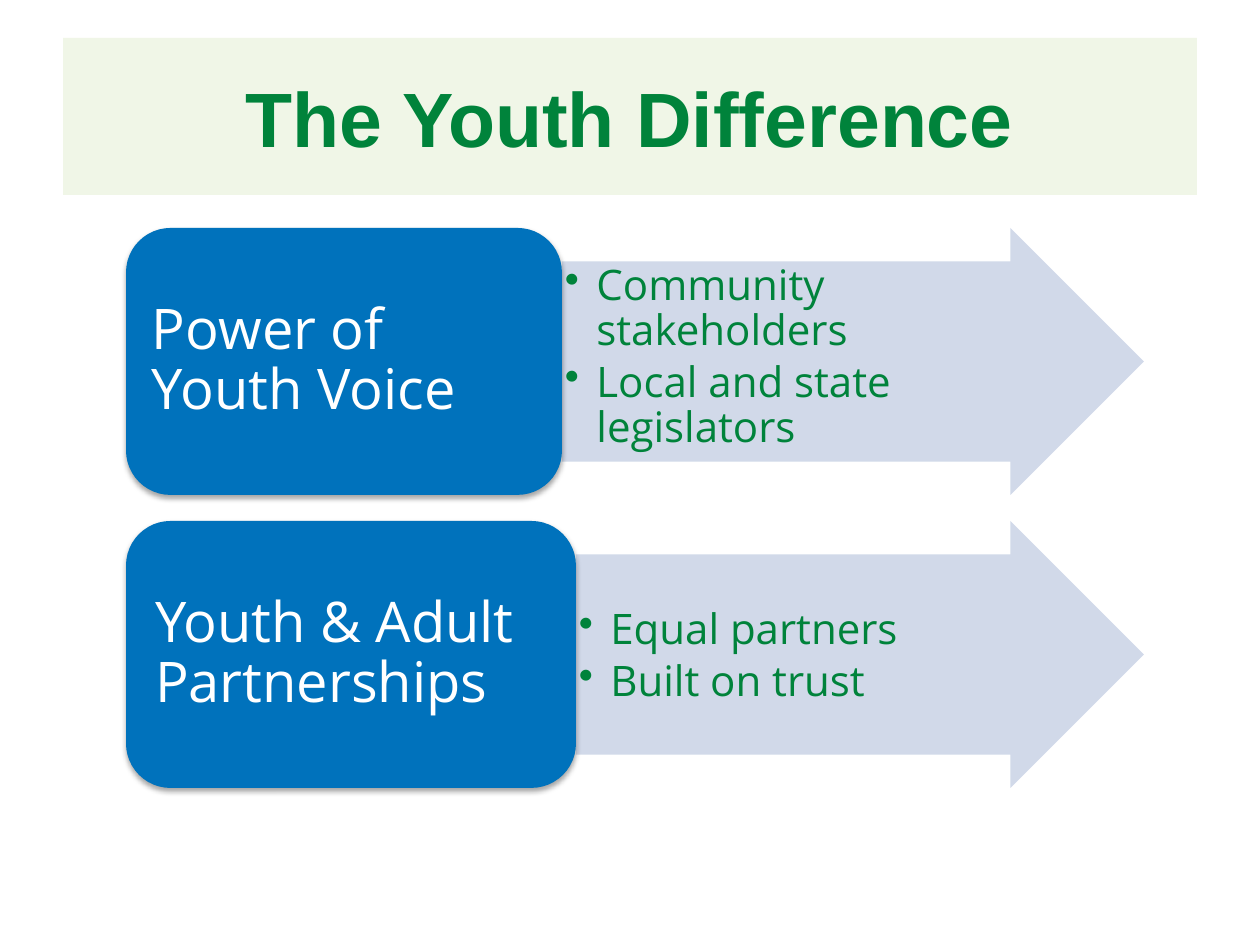
import pptx
import pptx.util
import pptx.dml.color
import pptx.enum.shapes
import pptx.enum.text
import lxml.etree

TITLE = "The Youth Difference"
ROWS = [
    {"head": "Power of Youth Voice", "wide": 436, "left": 13, "drop": 3,
     "items": ["Community stakeholders", "Local and state legislators"]},
    {"head": "Youth & Adult Partnerships", "wide": 450, "left": 16, "drop": 54,
     "items": ["Equal partners", "Built on trust"]},
]
COLORS = {"band": "F0F6E7", "green": "00833B", "blue": "0072BC",
          "arrow": "CCD5E7", "white": "FFFFFF", "shade": "000000"}
LEFT, RIGHT, TOP, HIGH, GAP = 126, 1144, 228, 267, 26

Pt = pptx.util.Pt
Kind = pptx.enum.shapes.MSO_SHAPE
Anchor = pptx.enum.text.MSO_ANCHOR
Align = pptx.enum.text.PP_ALIGN


def px(n):
    return pptx.util.Emu(round(n * 914400 / 126))


def rgb(name):
    return pptx.dml.color.RGBColor.from_string(COLORS[name])


def add(node, tag, **attrs):
    return lxml.etree.SubElement(node, pptx.oxml.ns.qn(tag), attrs)


def paint(shape, color):
    shape.fill.solid()
    shape.fill.fore_color.rgb = rgb(color)


def block(kind, x, y, w, color, insets, anchor):
    shape = slide.shapes.add_shape(kind, px(x), px(y), px(w), px(HIGH))
    shape.shadow.inherit = False
    paint(shape, color)
    shape.line.fill.background()
    frame = shape.text_frame
    frame.word_wrap = True
    frame.vertical_anchor = anchor
    (frame.margin_left, frame.margin_top,
     frame.margin_right, frame.margin_bottom) = map(px, insets)
    return shape


def style(para, face, size, color, align, bold=False):
    para.alignment = align
    para.font.name = face
    para.font.size = Pt(size)
    para.font.bold = bold
    para.font.color.rgb = rgb(color)


def write(shape, lines, size, color, after, bullet=False):
    frame = shape.text_frame
    for i, line in enumerate(lines):
        para = frame.paragraphs[0] if i == 0 else frame.add_paragraph()
        para.text = line
        if bullet:
            props = para._p.get_or_add_pPr()
            props.set("marL", "228600")
            props.set("indent", "-228600")
            add(props, "a:buChar", char="•")
        para.line_spacing = 0.9
        para.space_after = Pt(after)
        style(para, "Open Sans", size, color, Align.LEFT)


def shade(shape):
    effects = shape._element.spPr.find(pptx.oxml.ns.qn("a:effectLst"))
    outer = add(effects, "a:outerShdw", blurRad="40000", dist="23000",
                dir="5400000", rotWithShape="0")
    tint = add(outer, "a:srgbClr", val=COLORS["shade"])
    add(tint, "a:alpha", val="35000")


deck = pptx.Presentation()
deck.slide_width, deck.slide_height = px(1260), px(945)
slide = deck.slides.add_slide(deck.slide_layouts[5])

title = slide.shapes.title
title.left, title.top, title.width, title.height = map(px, (63, 38, 1134, 157))
paint(title, "band")
title.text_frame.text = TITLE
title.text_frame.vertical_anchor = Anchor.MIDDLE
style(title.text_frame.paragraphs[0], "Arial", 44, "green", Align.CENTER, True)

for i, row in enumerate(ROWS):
    y = TOP + i * (HIGH + GAP)
    x = LEFT + row["wide"]
    arrow = block(Kind.RIGHT_ARROW, x, y, RIGHT - x, "arrow",
                  (3, row["drop"], 70, 3), Anchor.TOP)
    arrow.adjustments[0] = 0.75
    arrow.adjustments[1] = 0.5
    tone = arrow.fill._xPr.find(".//" + pptx.oxml.ns.qn("a:srgbClr"))
    add(tone, "a:alpha", val="90000")
    write(arrow, row["items"], 24, "green", 3.6, bullet=True)

    card = block(Kind.ROUNDED_RECTANGLE, LEFT, y, row["wide"], "blue",
                 (row["left"], 9, 16, 9), Anchor.MIDDLE)
    shade(card)
    write(card, [row["head"]], 32, "white", 11.2)

deck.save("out.pptx")
